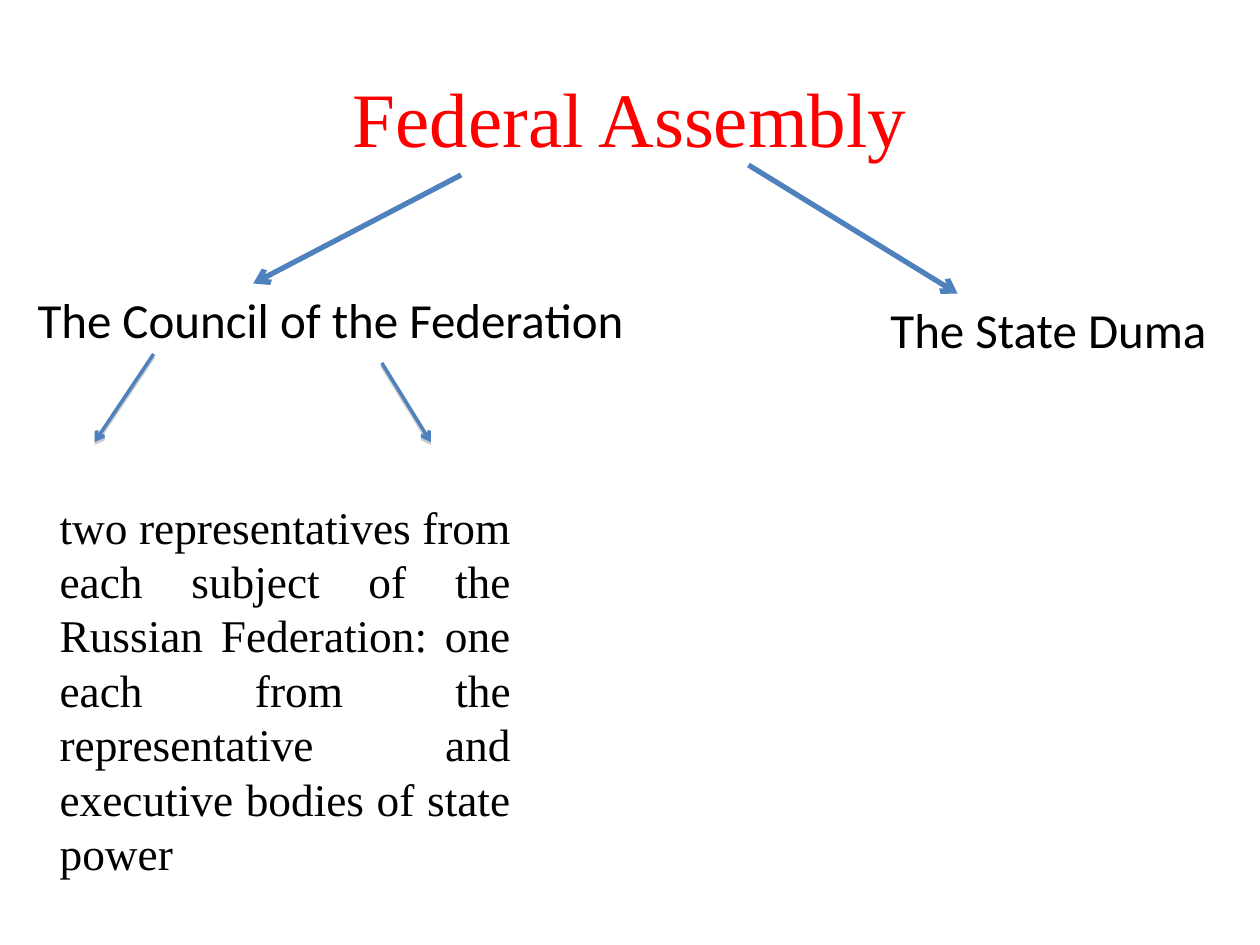
from lxml import etree
from pptx import Presentation
from pptx.dml.color import RGBColor
from pptx.enum.shapes import MSO_CONNECTOR
from pptx.enum.text import MSO_ANCHOR, MSO_AUTO_SIZE, PP_ALIGN
from pptx.oxml.ns import qn
from pptx.util import Pt

STRAIGHT = MSO_CONNECTOR.STRAIGHT
MIDDLE, TOP = MSO_ANCHOR.MIDDLE, MSO_ANCHOR.TOP
FIT, FIXED = MSO_AUTO_SIZE.SHAPE_TO_FIT_TEXT, MSO_AUTO_SIZE.NONE
LEFT, CENTER, JUSTIFY = PP_ALIGN.LEFT, PP_ALIGN.CENTER, PP_ALIGN.JUSTIFY
SERIF, SANS = "Times New Roman", "Calibri"
BLACK, RED, BLUE, GRAY = "000000", "FF0000", "4F81BD", "808080"


def color(code):
    return RGBColor.from_string(code)


def write(frame, text, size, face, ink=BLACK, align=LEFT):
    frame.text = text
    para = frame.paragraphs[0]
    para.alignment = align
    para.font.size = Pt(size)
    para.font.name = face
    para.font.color.rgb = color(ink)
    return para


def add_title(slide, text):
    title = slide.shapes.title
    title.left, title.top = Pt(36), Pt(21.6)
    title.width, title.height = Pt(648), Pt(90)
    title.text_frame.vertical_anchor = MIDDLE
    write(title.text_frame, text, 44, SERIF, RED, CENTER)


def add_label(slide, text, x, y, width):
    frame = slide.shapes.add_textbox(Pt(x), Pt(y), Pt(width), Pt(41)).text_frame
    frame.word_wrap = False
    frame.auto_size = FIT
    write(frame, text, 28, SANS)


def add_body(slide, text):
    box = slide.shapes.add_textbox(Pt(27), Pt(281.5), Pt(272), Pt(222))
    frame = box.text_frame
    frame.word_wrap = True
    frame.auto_size = FIXED
    frame.vertical_anchor = TOP
    para = write(frame, text, 25.9, SERIF, align=JUSTIFY)
    para.line_spacing = Pt(31.1)
    para.space_before = Pt(2)


def add_arrow(slide, start, end, width, shadow=False):
    arrow = slide.shapes.add_connector(STRAIGHT, *map(Pt, start + end))
    arrow.line.color.rgb = color(BLUE)
    arrow.line.width = Pt(width)
    etree.SubElement(arrow.line._get_or_add_ln(), qn("a:tailEnd"), type="arrow")
    effects = etree.SubElement(arrow._element.spPr, qn("a:effectLst"))
    if shadow:
        drop = etree.SubElement(effects, qn("a:outerShdw"), blurRad="0",
                                dist=str(Pt(1.6)), dir="5400000", rotWithShape="0")
        tint = etree.SubElement(drop, qn("a:srgbClr"), val=GRAY)
        etree.SubElement(tint, qn("a:alpha"), val="38000")


def main():
    deck = Presentation()
    deck.slide_width, deck.slide_height = Pt(720), Pt(540)
    slide = deck.slides.add_slide(deck.slide_layouts[5])
    add_title(slide, "Federal Assembly")
    add_body(slide, "two representatives from each subject of the Russian "
                    "Federation: one each from the representative and "
                    "executive bodies of state power")
    add_arrow(slide, (263.5, 100), (144.7, 162), 3)
    add_arrow(slide, (427.7, 94.3), (547.2, 167.8), 3)
    add_label(slide, "The Council of the Federation", 14.4, 162, 355)
    add_label(slide, "The State Duma", 501.8, 167.8, 198.7)
    add_arrow(slide, (87.8, 202.3), (54, 252.7), 2, shadow=True)
    add_arrow(slide, (218.2, 207.4), (246.2, 252.7), 2, shadow=True)
    deck.save("out.pptx")


if __name__ == "__main__":
    main()
